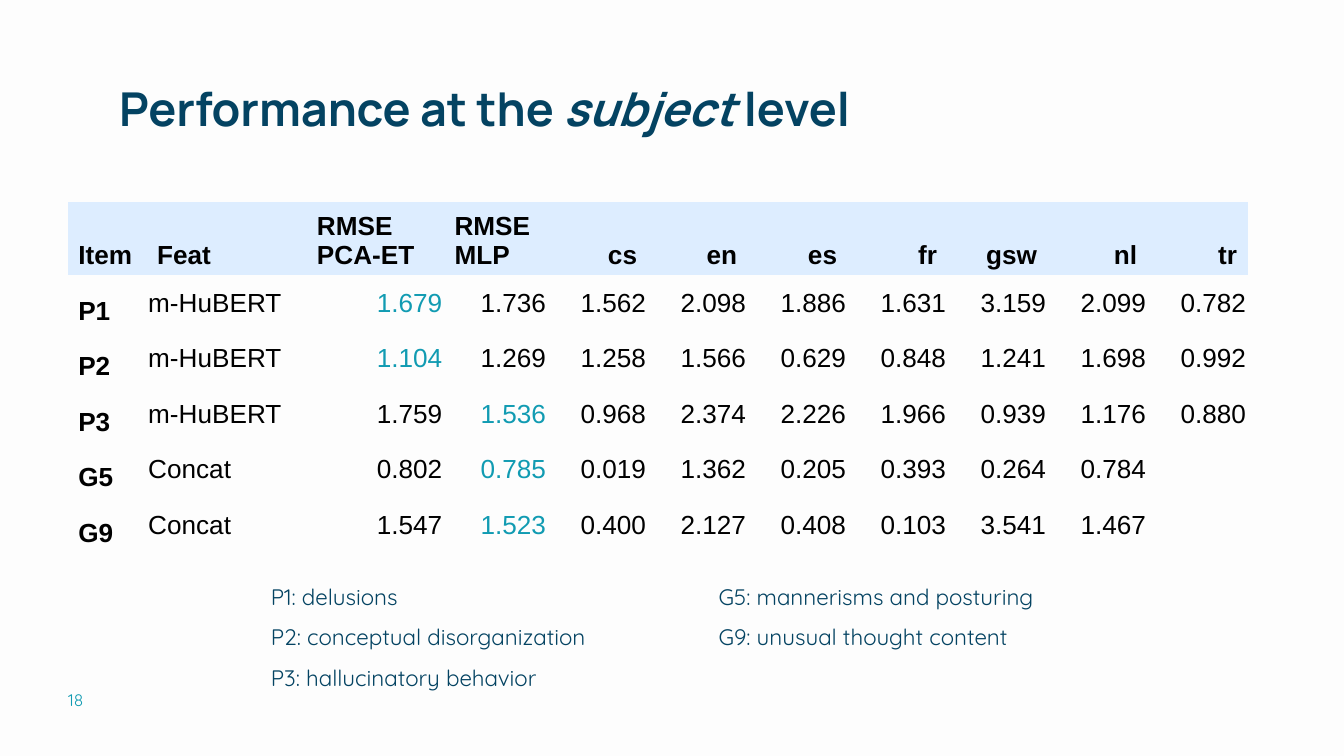
"""Build the slide on performance at the subject level."""
from pptx import Presentation
from pptx.dml.color import RGBColor
from pptx.enum.text import MSO_ANCHOR, PP_ALIGN
from pptx.oxml.ns import qn
from pptx.util import Cm, Pt

LEFT, RIGHT = PP_ALIGN.LEFT, PP_ALIGN.RIGHT
TOP, MIDDLE, BOTTOM = MSO_ANCHOR.TOP, MSO_ANCHOR.MIDDLE, MSO_ANCHOR.BOTTOM
NAVY = RGBColor(0x04, 0x43, 0x62)
TEAL = RGBColor(0x11, 0x9B, 0xB2)
BLACK = RGBColor(0, 0, 0)
PALE_BLUE = RGBColor(0xDD, 0xED, 0xFF)
OFF_WHITE = RGBColor(0xFD, 0xFD, 0xFD)
PLAIN_TABLE_STYLE = "{2D5ABB26-0587-4C30-8999-92F81FD0307C}"

TITLE = [("Performance at the ", False), ("subject", True), (" level", False)]
HEADER = ["Item", "Feat", "RMSE PCA-ET", "RMSE MLP",
          "cs", "en", "es", "fr", "gsw", "nl", "tr"]
RESULTS = [
    ["P1", "m-HuBERT", "1.679", "1.736", "1.562", "2.098", "1.886", "1.631", "3.159", "2.099", "0.782"],
    ["P2", "m-HuBERT", "1.104", "1.269", "1.258", "1.566", "0.629", "0.848", "1.241", "1.698", "0.992"],
    ["P3", "m-HuBERT", "1.759", "1.536", "0.968", "2.374", "2.226", "1.966", "0.939", "1.176", "0.880"],
    ["G5", "Concat", "0.802", "0.785", "0.019", "1.362", "0.205", "0.393", "0.264", "0.784", ""],
    ["G9", "Concat", "1.547", "1.523", "0.400", "2.127", "0.408", "0.103", "3.541", "1.467", ""],
]
PCA_COLUMN, MLP_COLUMN, FIRST_LANGUAGE = 2, 3, 4
COLUMN_WIDTHS = [1.49, 3.02, 2.6, 1.96] + [1.89] * 7
HEADER_HEIGHT, ROW_HEIGHT = 1.3, 1.05
LEGENDS = [
    (4.87, 2.82, ["P1: delusions", "P2: conceptual disorganization",
                  "P3: hallucinatory behavior"]),
    (13.33, 2.06, ["G5: mannerisms and posturing", "G9: unusual thought content"]),
]


def style_font(font, name, size, color, bold=False, italic=False):
    font.name, font.size = name, Pt(size)
    font.bold, font.italic = bold, italic
    font.color.rgb = color


def set_insets(frame, inset=0.25):
    frame.margin_left = frame.margin_right = Cm(inset)
    frame.margin_top = frame.margin_bottom = Cm(inset)
    frame.word_wrap = True


def add_title(slide):
    title = slide.shapes.title
    title.left, title.top, title.width, title.height = Cm(2), Cm(1.24), Cm(21.42), Cm(1.6)
    set_insets(title.text_frame)
    title.text_frame.vertical_anchor = MIDDLE
    paragraph = title.text_frame.paragraphs[0]
    paragraph.alignment = LEFT
    for text, italic in TITLE:
        run = paragraph.add_run()
        run.text = text
        style_font(run.font, "Manrope", 25, NAVY, True, italic)


def add_text(slide, box, lines, size, color, spacing=1.0):
    frame = slide.shapes.add_textbox(*map(Cm, box)).text_frame
    set_insets(frame)
    frame.vertical_anchor = TOP
    frame.text = "\n".join(lines)
    for paragraph in frame.paragraphs:
        paragraph.line_spacing = spacing
        style_font(paragraph.runs[0].font, "Quicksand", size, color)


def fill_cell(cell, text, is_header, column, is_best):
    is_label = is_header or column == 0
    side, edge = (0.2, 0.1) if is_label else (0.03, 0.02)
    cell.margin_left = cell.margin_right = Cm(side)
    cell.margin_top = cell.margin_bottom = Cm(edge)
    cell.vertical_anchor = BOTTOM if is_label else MIDDLE
    if is_header:
        cell.fill.solid()
        cell.fill.fore_color.rgb = PALE_BLUE
    else:
        cell.fill.background()
    first_right = FIRST_LANGUAGE if is_header else PCA_COLUMN
    cell.text = text
    paragraph = cell.text_frame.paragraphs[0]
    paragraph.alignment = RIGHT if column >= first_right else LEFT
    for run in paragraph.runs:
        style_font(run.font, "Arial", 14, TEAL if is_best else BLACK, is_label)


def add_results(slide):
    rows = [HEADER] + RESULTS
    heights = [HEADER_HEIGHT] + [ROW_HEIGHT] * len(RESULTS)
    table = slide.shapes.add_table(
        len(rows), len(HEADER), Cm(1.28), Cm(3.82),
        Cm(sum(COLUMN_WIDTHS)), Cm(sum(heights))).table
    table.horz_banding = False
    table._tbl.tblPr.find(qn("a:tableStyleId")).text = PLAIN_TABLE_STYLE
    for column, width in zip(table.columns, COLUMN_WIDTHS):
        column.width = Cm(width)
    for row, height in zip(table.rows, heights):
        row.height = Cm(height)
    for row_index, values in enumerate(rows):
        is_header = row_index == 0
        best = min((PCA_COLUMN, MLP_COLUMN), key=lambda column: values[column])
        for column, text in enumerate(values):
            fill_cell(table.cell(row_index, column), text, is_header, column,
                      column == best and not is_header)


def main():
    presentation = Presentation()
    presentation.slide_width, presentation.slide_height = Cm(25.4), Cm(14.29)
    slide = presentation.slides.add_slide(presentation.slide_layouts[5])
    slide.background.fill.solid()
    slide.background.fill.fore_color.rgb = OFF_WHITE
    add_text(slide, (1.04, 12.85, 5.16, 0.79), ["18"], 9, TEAL)
    add_title(slide)
    add_results(slide)
    for left, height, lines in LEGENDS:
        add_text(slide, (left, 10.52, 8.89, height), lines, 12, NAVY, 1.5)
    presentation.save("out.pptx")


if __name__ == "__main__":
    main()
